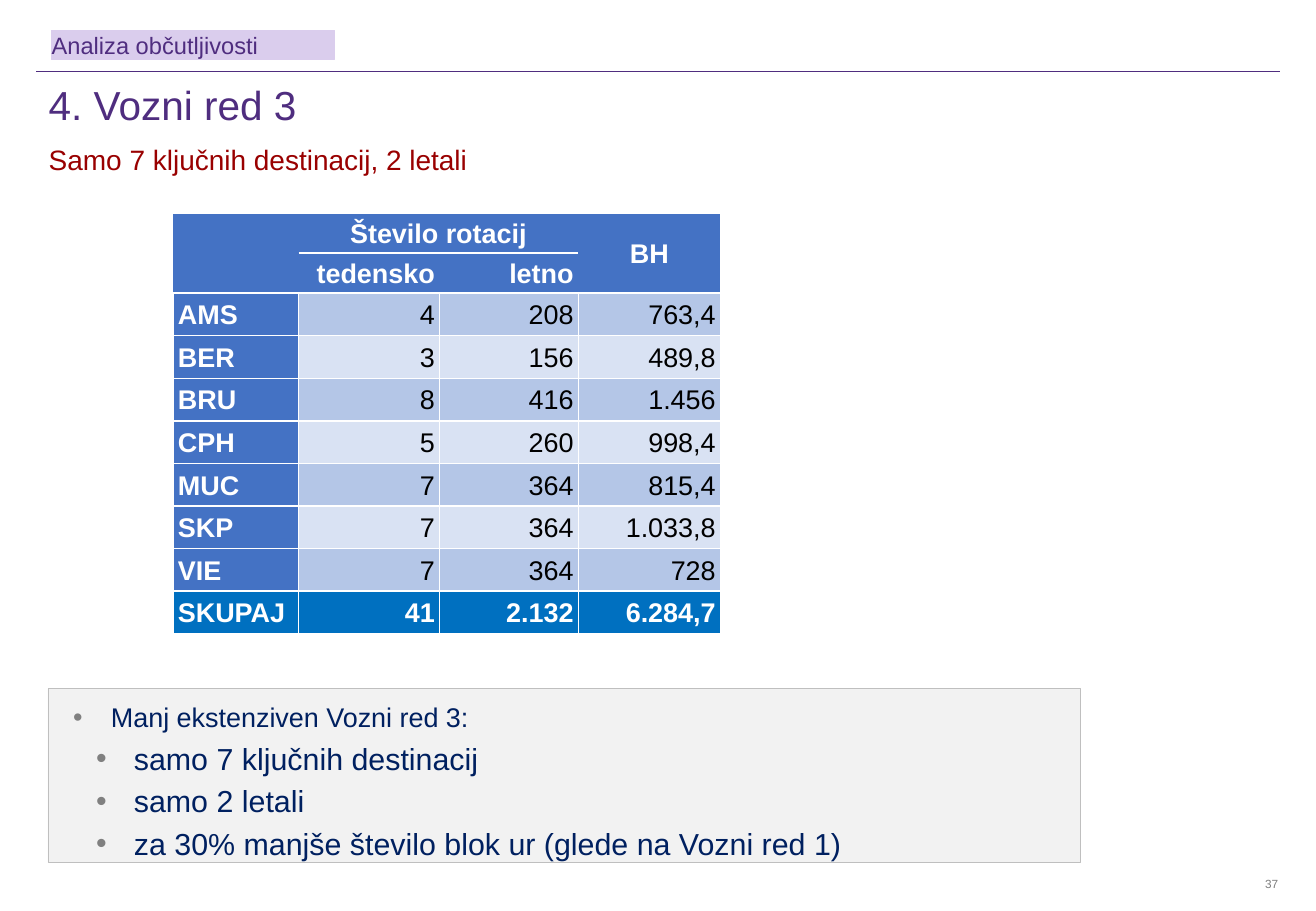
import pptx
import pptx.util
import pptx.dml.color
import pptx.enum.shapes
import pptx.enum.text
import pptx.oxml.ns
from lxml import etree

Cm, Pt = pptx.util.Cm, pptx.util.Pt
Align = pptx.enum.text.PP_ALIGN
Anchor = pptx.enum.text.MSO_ANCHOR
qn = pptx.oxml.ns.qn

LABEL = "Analiza občutljivosti"
TITLE = "4. Vozni red 3"
SUBTITLE = "Samo 7 ključnih destinacij, 2 letali"
PAGE = "37"
HEAD = [["", "Število rotacij", "", "BH"], ["", "tedensko", "letno", ""]]
ROUTES = [
    ["AMS", "4", "208", "763,4"],
    ["BER", "3", "156", "489,8"],
    ["BRU", "8", "416", "1.456"],
    ["CPH", "5", "260", "998,4"],
    ["MUC", "7", "364", "815,4"],
    ["SKP", "7", "364", "1.033,8"],
    ["VIE", "7", "364", "728"],
]
TOTAL = ["SKUPAJ", "41", "2.132", "6.284,7"]
# level, text
NOTES = [
    (0, "Manj ekstenziven Vozni red 3:"),
    (1, "samo 7 ključnih destinacij"),
    (1, "samo 2 letali"),
    (1, "za 30% manjše število blok ur (glede na Vozni red 1)"),
]

THEME = {
    "font": "Arial",
    "purple": "4F2D7F", "lilac": "DACDED", "red": "990000", "navy": "002060",
    "gray": "7F7F7F", "dot": "808080", "panel": "F2F2F2", "edge": "BFBFBF",
    "white": "FFFFFF", "black": "000000", "head": "4472C4", "total": "0070C0",
    "bands": ["B4C6E7", "D9E2F3"],
    "title": 24, "subtitle": 16.6, "label": 14, "cell": 16, "page": 7,
    "notes": [16, 18],
}
INDENT = [1.07, 1.55]
HANG = 0.79
WIDTHS = [2.62, 2.95, 2.9, 2.97]
HEAD_ROW, BODY_ROW = 0.84, 0.89
NO_GRID = "{2D5ABB26-0587-4C30-8999-92F81FD0307C}"


def color(name):
    return pptx.dml.color.RGBColor.from_string(THEME.get(name, name))


def style(para, size, ink, bold=False, align=Align.LEFT):
    para.alignment = align
    font = para.font
    font.name, font.size, font.bold = THEME["font"], Pt(size), bold
    font.color.rgb = color(ink)


def pad(item, side, top):
    item.margin_left = item.margin_right = Cm(side)
    item.margin_top = item.margin_bottom = Cm(top)


def write(slide, box, text, size, ink, align=Align.LEFT, wrap=True):
    frame = slide.shapes.add_textbox(*map(Cm, box)).text_frame
    frame.word_wrap = wrap
    pad(frame, 0, 0)
    frame.text = text
    style(frame.paragraphs[0], size, ink, align=align)
    return frame


def panel(slide, box, fill, edge, width):
    shape = slide.shapes.add_shape(pptx.enum.shapes.MSO_SHAPE.RECTANGLE, *map(Cm, box))
    shape.shadow.inherit = False
    shape.fill.solid()
    shape.fill.fore_color.rgb = color(fill)
    shape.line.color.rgb = color(edge)
    shape.line.width = Pt(width)
    frame = shape.text_frame
    frame.word_wrap = True
    frame.vertical_anchor = Anchor.TOP
    return frame


def bullet(para, level):
    props = para._p.get_or_add_pPr()
    props.set("marL", str(Cm(INDENT[level])))
    props.set("indent", str(-Cm(HANG)))
    tint = etree.SubElement(props, qn("a:buClr"))
    etree.SubElement(tint, qn("a:srgbClr"), val=THEME["dot"])
    etree.SubElement(props, qn("a:buFont"), typeface=THEME["font"])
    etree.SubElement(props, qn("a:buChar"), char="•")


def border(cell, sides):
    """Draw thin white lines on the sides named by the letters L, R, T, B."""
    props = cell._tc.get_or_add_tcPr()
    for spot, side in enumerate(sides):
        line = etree.Element(qn("a:ln" + side), w=str(Pt(1)))
        fill = etree.SubElement(line, qn("a:solidFill"))
        etree.SubElement(fill, qn("a:srgbClr"), val=THEME["white"])
        props.insert(spot, line)


def look(row, col, last):
    """Give fill, text colour, boldness, alignment and border sides of a cell."""
    align = Align.RIGHT if col else Align.LEFT
    if row < len(HEAD):
        if row == 0:
            align = Align.CENTER
        sides = "TB" if col in (1, 2) else "TB"[row]
        return "head", "white", True, align, sides
    if row == last:
        return "total", "white", True, align, "LRTB"
    if col == 0:
        return "head", "white", True, align, "LRTB"
    return THEME["bands"][row % 2], "black", False, align, "LRTB"


def timetable(slide, left, top):
    rows = HEAD + ROUTES + [TOTAL]
    highs = [HEAD_ROW] * len(HEAD) + [BODY_ROW] * (len(rows) - len(HEAD))
    table = slide.shapes.add_table(
        len(rows), len(WIDTHS), Cm(left), Cm(top), Cm(sum(WIDTHS)), Cm(sum(highs))).table
    table._tbl.tblPr.find(qn("a:tableStyleId")).text = NO_GRID
    for col, width in zip(table.columns, WIDTHS):
        col.width = Cm(width)
    for r, (texts, high) in enumerate(zip(rows, highs)):
        table.rows[r].height = Cm(high)
        for c, text in enumerate(texts):
            cell = table.cell(r, c)
            fill, ink, bold, align, sides = look(r, c, len(rows) - 1)
            pad(cell, 0.1, 0)
            cell.vertical_anchor = Anchor.MIDDLE
            cell.fill.solid()
            cell.fill.fore_color.rgb = color(fill)
            border(cell, sides)
            cell.text = text
            para = cell.text_frame.paragraphs[0]
            para.line_spacing = 1.07
            style(para, THEME["cell"], ink, bold, align)
    table.cell(0, 0).merge(table.cell(1, 0))
    table.cell(0, 1).merge(table.cell(0, 2))
    table.cell(0, 3).merge(table.cell(1, 3))


def main():
    deck = pptx.Presentation()
    deck.slide_width, deck.slide_height = Cm(27.51), Cm(19.05)
    slide = deck.slides.add_slide(deck.slide_layouts[6])

    rule = slide.shapes.add_connector(
        pptx.enum.shapes.MSO_CONNECTOR.STRAIGHT, Cm(0.76), Cm(1.48), Cm(26.75), Cm(1.48))
    rule.line.color.rgb = color("purple")
    rule.line.width = Pt(0.25)
    etree.SubElement(rule._element.spPr, qn("a:effectLst"))

    write(slide, (26.42, 18.34, 0.3, 0.3), PAGE, THEME["page"], "gray", Align.RIGHT, False)

    notes = panel(slide, (1, 14.4, 21.59, 3.63), "panel", "edge", 0.25)
    notes.margin_top = Cm(0.26)
    for spot, (level, text) in enumerate(NOTES):
        para = notes.add_paragraph() if spot else notes.paragraphs[0]
        para.text = text
        para.level = level
        if spot:
            para.space_before = Pt(3.7)
        bullet(para, level)
        style(para, THEME["notes"][level], "navy")

    title = write(slide, (1.02, 1.73, 25.5, 1.02), TITLE, THEME["title"], "purple")
    title.vertical_anchor = Anchor.MIDDLE
    title.paragraphs[0].line_spacing = 0.9

    label = panel(slide, (1.08, 0.64, 5.92, 0.6), "lilac", "lilac", 0.75)
    pad(label, 0, 0)
    label.text = LABEL
    style(label.paragraphs[0], THEME["label"], "purple")

    write(slide, (1.02, 2.97, 17.1, 0.71), SUBTITLE, THEME["subtitle"], "red")
    timetable(slide, 3.62, 4.45)
    deck.save("out.pptx")


if __name__ == "__main__":
    main()
